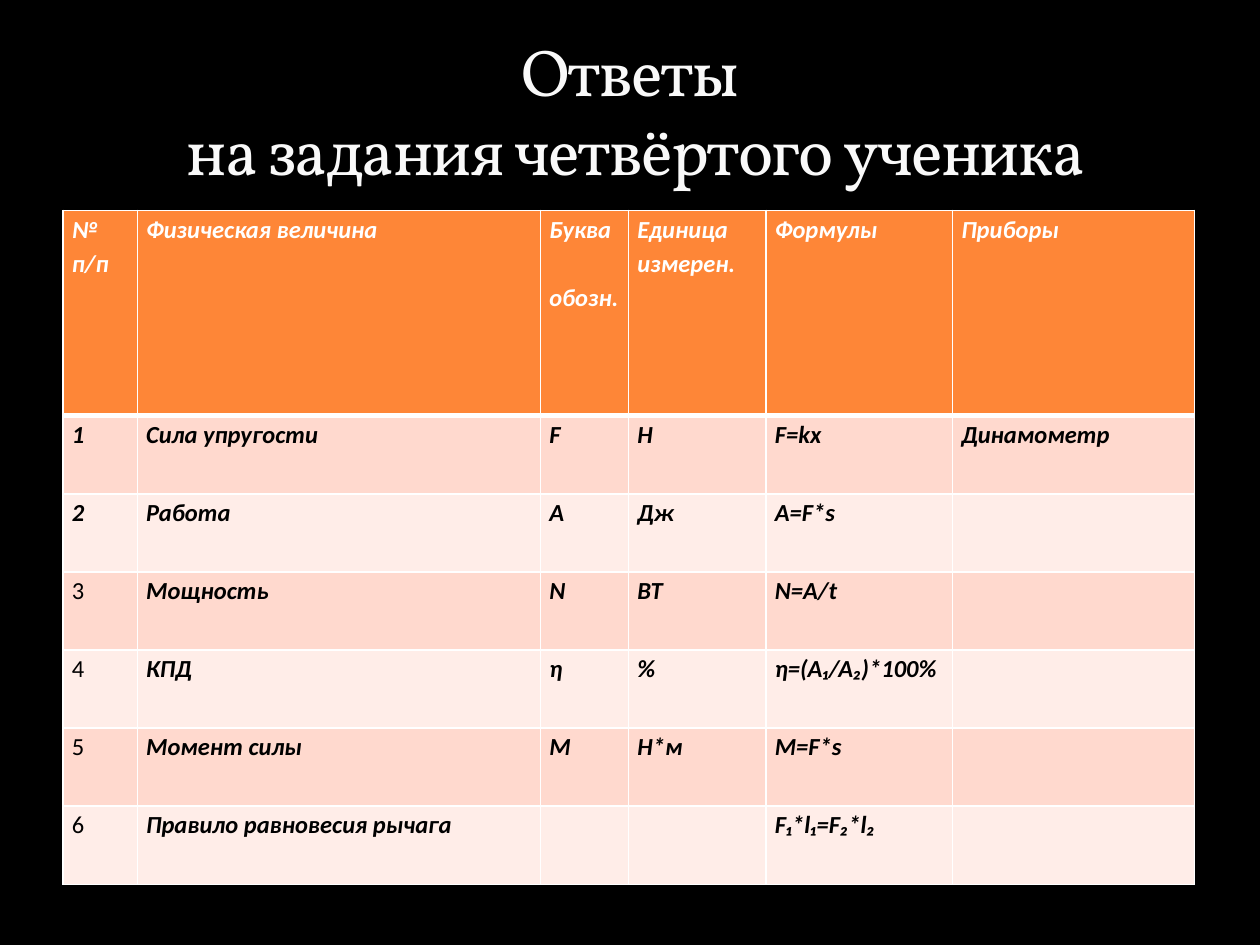
from lxml.etree import SubElement
from pptx import Presentation
from pptx.dml.color import RGBColor
from pptx.enum.text import MSO_ANCHOR, MSO_AUTO_SIZE, PP_ALIGN
from pptx.oxml.ns import qn
from pptx.util import Inches, Pt

TITLE = "Ответы\v на задания четвёртого ученика"
HEADINGS = ["№ п/п", "Физическая величина", "Буква\n обозн.",
            "Единица измерен.", "Формулы", "Приборы"]
ANSWERS = [
    ["1", "Сила упругости", "F", "Н", "F=kx", "Динамометр"],
    ["2", "Работа", "A", "Дж", "A=F*s", ""],
    ["3", "Мощность", "N", "ВТ", "N=A/t", ""],
    ["4", "КПД", "η", "%", "η=(A₁/A₂)*100%", ""],
    ["5", "Момент силы", "М", "Н*м", "М=F*s", ""],
    ["6", "Правило равновесия рычага", "", "", "F₁*l₁=F₂*l₂", ""],
]
COLUMN_WIDTHS = [0.59, 3.2, 0.7, 1.09, 1.48, 1.92]
HEADER_HEIGHT, ANSWER_HEIGHT = 1.63, 0.62
HEADER_FILL, BAND_FILLS = "FE8637", ["FFD9CE", "FFEDE8"]


def color(hex_code):
    return RGBColor.from_string(hex_code)


def write(frame, text, *, font, size, ink, bold=False, italic=False,
          align=PP_ALIGN.LEFT, spacing=None):
    frame.text = text
    for paragraph in frame.paragraphs:
        paragraph.alignment = align
        paragraph.line_spacing = spacing
        for run in paragraph.runs:
            run.font.name, run.font.size = font, Pt(size)
            run.font.bold, run.font.italic = bold, italic
            run.font.color.rgb = color(ink)


def add_line(parent, tag, ink, width, alpha=None, index=None):
    """Add a solid outline or border element to a properties element."""
    line = SubElement(parent, qn(tag), w=str(Pt(width)))
    fill = SubElement(line, qn("a:solidFill"))
    tint = SubElement(fill, qn("a:srgbClr"), val=ink)
    if alpha is not None:
        SubElement(tint, qn("a:alpha"), val=str(alpha * 1000))
    if index is not None:
        parent.insert(index, line)


def place_title(slide, left, top, width, height):
    title = slide.shapes.title
    title.left, title.top = Inches(left), Inches(top)
    title.width, title.height = Inches(width), Inches(height)
    frame = title.text_frame
    frame.word_wrap, frame.auto_size = True, MSO_AUTO_SIZE.NONE
    frame.vertical_anchor = MSO_ANCHOR.BOTTOM
    frame.margin_top = frame.margin_bottom = 0
    write(frame, TITLE, font="Vollkorn", size=37.8, ink="F9F9F9",
          align=PP_ALIGN.CENTER)
    for run in frame.paragraphs[0].runs:
        properties = run.font._element
        properties.set("spc", "-100")
        add_line(properties, "a:ln", "4D5460", 0.25, alpha=25, index=0)


def format_cell(cell, text, fill, top=1, bottom=1, **text_format):
    cell.margin_left = cell.margin_right = Inches(0.07)
    cell.margin_top = cell.margin_bottom = 0
    properties = cell._tc.get_or_add_tcPr()
    for tag, width in (("a:lnL", 1), ("a:lnR", 1),
                       ("a:lnT", top), ("a:lnB", bottom)):
        add_line(properties, tag, "FFFFFF", width)
    cell.fill.solid()
    cell.fill.fore_color.rgb = color(fill)
    if text:
        write(cell.text_frame, text, font="Calibri", size=14, spacing=1.15,
              **text_format)


def place_answers(slide, left, top, width, height):
    table = slide.shapes.add_table(
        len(ANSWERS) + 1, len(HEADINGS), Inches(left), Inches(top),
        Inches(width), Inches(height)).table
    for column, column_width in zip(table.columns, COLUMN_WIDTHS):
        column.width = Inches(column_width)
    for row in table.rows:
        row.height = Inches(ANSWER_HEIGHT)
    table.rows[0].height = Inches(HEADER_HEIGHT)

    for column, heading in enumerate(HEADINGS):
        format_cell(table.cell(0, column), heading, HEADER_FILL, bottom=3,
                    ink="FFFFFF", bold=True, italic=True)
    for number, answer in enumerate(ANSWERS, start=1):
        for column, text in enumerate(answer):
            strong = column > 0 or number <= 2
            format_cell(table.cell(number, column), text,
                        BAND_FILLS[(number - 1) % 2],
                        top=3 if number == 1 else 1,
                        ink="000000", bold=strong, italic=strong)


def main():
    deck = Presentation()
    deck.slide_width, deck.slide_height = Inches(10), Inches(7.5)
    slide = deck.slides.add_slide(deck.slide_layouts[5])
    slide.background.fill.solid()
    slide.background.fill.fore_color.rgb = color("000000")
    place_answers(slide, 0.5, 1.67, 9, 5.36)
    place_title(slide, 0.5, 0.17, 9, 1.33)
    deck.save("out.pptx")


if __name__ == "__main__":
    main()
